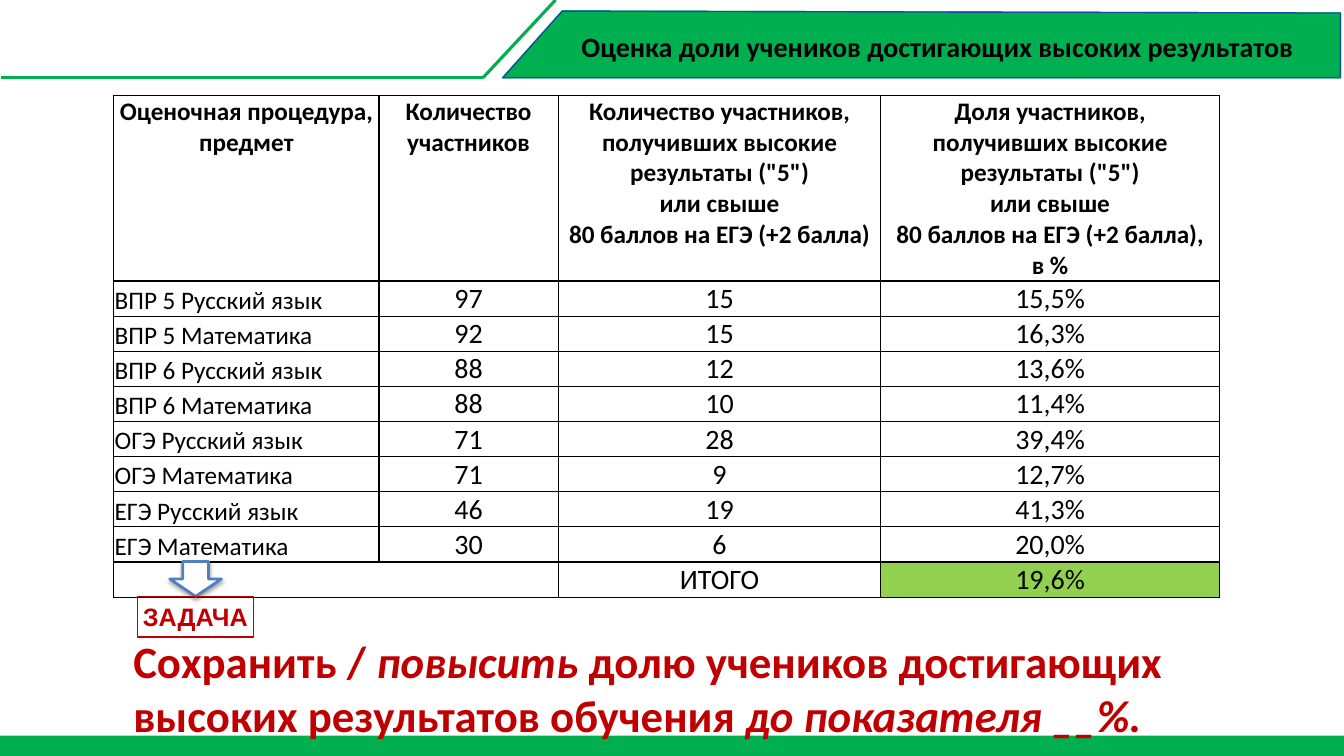
import collections
import lxml.etree
import pptx
import pptx.dml.color
import pptx.enum.shapes
import pptx.enum.text
import pptx.oxml
import pptx.oxml.ns
import pptx.util

Cm = pptx.util.Cm
Pt = pptx.util.Pt
RGBColor = pptx.dml.color.RGBColor
SHAPES = pptx.enum.shapes.MSO_SHAPE
ALIGN = pptx.enum.text.PP_ALIGN
ANCHOR = pptx.enum.text.MSO_ANCHOR
FIT = pptx.enum.text.MSO_AUTO_SIZE
qn = pptx.oxml.ns.qn

GREEN = RGBColor(0x00, 0xB0, 0x50)
NAVY = RGBColor(0x0C, 0x54, 0x9E)
BLUE = RGBColor(0x4F, 0x81, 0xBD)
RED = RGBColor(0xC0, 0x00, 0x00)
LIME = RGBColor(0x92, 0xD0, 0x50)
BLACK = RGBColor(0, 0, 0)
WHITE = RGBColor(255, 255, 255)

Box = collections.namedtuple("Box", "left top width height")
PAGE = Box(0, 0, 33.87, 19.05)

TITLE_FONT = {"name": "Calibri", "size": Pt(20), "bold": True}
HEADER_FONT = {"name": "Calibri", "size": Pt(18), "bold": True}
LABEL_FONT = {"name": "Calibri", "size": Pt(18), "bold": False}
VALUE_FONT = {"name": "Calibri", "size": Pt(20), "bold": False}
TASK_FONT = {"name": "Arial", "size": Pt(18), "bold": True}
GOAL_FONT = {"name": "Calibri", "size": Pt(32), "bold": True}

COLUMN_WIDTHS = [6.68, 4.52, 8.13, 8.53]
HEADER_HEIGHT = 4.6
ROW_HEIGHT = 0.87
HEADERS = [
    "Оценочная процедура, предмет",
    "Количество участников",
    'Количество участников, получивших высокие результаты ("5")\n'
    "или свыше\n80 баллов на ЕГЭ (+2 балла)",
    'Доля участников,\nполучивших высокие результаты ("5")\n'
    "или свыше\n80 баллов на ЕГЭ (+2 балла),\nв %",
]
RESULTS = [
    ("ВПР 5 Русский язык", "97", "15", "15,5%"),
    ("ВПР 5 Математика", "92", "15", "16,3%"),
    ("ВПР 6 Русский язык", "88", "12", "13,6%"),
    ("ВПР 6 Математика", "88", "10", "11,4%"),
    ("ОГЭ Русский язык", "71", "28", "39,4%"),
    ("ОГЭ Математика", "71", "9", "12,7%"),
    ("ЕГЭ Русский язык", "46", "19", "41,3%"),
    ("ЕГЭ Математика", "30", "6", "20,0%"),
    ("", "", "ИТОГО", "19,6%"),
]
GOAL = [
    ("Сохранить / ", False),
    ("повысить", True),
    (" долю учеников достигающих высоких результатов обучения ", False),
    ("до показателя __%.", True),
]


def assign(target, values):
    for name, value in values.items():
        setattr(target, name, value)


def style_font(font, values, color):
    assign(font, values)
    font.color.rgb = color


def set_frame(frame, inset, wrap=True, anchor=ANCHOR.TOP):
    sides = ("left", "top", "right", "bottom")
    assign(frame, {f"margin_{side}": Cm(inset) for side in sides})
    assign(frame, {"word_wrap": wrap, "auto_size": FIT.NONE, "vertical_anchor": anchor})


def add_line(page, start, end):
    line = page.shapes.add_connector(
        pptx.enum.shapes.MSO_CONNECTOR.STRAIGHT, *map(Cm, start + end)
    )
    line.line.color.rgb = GREEN
    line.line.width = Pt(2.25)
    lxml.etree.SubElement(line.element.spPr, qn("a:effectLst"))


def add_banner(page, box):
    right, bottom = box.left + box.width, box.top + box.height
    corners = [
        (box.left + 1.5, box.top),
        (right, box.top + 0.05),
        (right, bottom),
        (box.left, bottom),
    ]
    points = [(Cm(x), Cm(y)) for x, y in corners]
    for fill, edge in ((GREEN, GREEN), (None, NAVY)):
        builder = page.shapes.build_freeform(*points[0], scale=1.0)
        builder.add_line_segments(points[1:], close=True)
        banner = builder.convert_to_shape()
        banner.shadow.inherit = False
        if fill:
            banner.fill.solid()
            banner.fill.fore_color.rgb = fill
        else:
            banner.fill.background()
        banner.line.color.rgb = edge
        banner.line.width = Pt(1)
    bend = (box.left - 0.5, bottom)
    add_line(page, (box.left + 1.33, 0), bend)
    add_line(page, bend, (0.03, bottom))

    title = page.shapes.title
    assign(title, {"left": Cm(box.left + 1.73), "top": Cm(box.top + 0.33),
                   "width": Cm(20.12), "height": Cm(1.11)})
    title.element.getparent().append(title.element)
    frame = title.text_frame
    frame.text = "Оценка доли учеников достигающих высоких результатов"
    set_frame(frame, 0.13)
    frame.margin_left = frame.margin_right = Cm(0.25)
    frame.paragraphs[0].alignment = ALIGN.LEFT
    style_font(frame.paragraphs[0].font, TITLE_FONT, BLACK)


def add_footer(page, box):
    bar = page.shapes.add_shape(SHAPES.RECTANGLE, *map(Cm, box))
    bar.shadow.inherit = False
    bar.fill.solid()
    bar.fill.fore_color.rgb = GREEN
    bar.line.fill.background()


def add_borders(cell):
    properties = cell._tc.get_or_add_tcPr()
    for index, side in enumerate("LRTB"):
        border = pptx.oxml.parse_xml(
            f'<a:ln{side} {pptx.oxml.ns.nsdecls("a")} w="12700"><a:solidFill>'
            f'<a:srgbClr val="{BLACK}"/></a:solidFill></a:ln{side}>'
        )
        properties.insert(index, border)


def fill_cell(cell, text, font, align, anchor):
    assign(cell, {"margin_left": Cm(0.02), "margin_right": Cm(0.02),
                  "margin_top": Cm(0.02), "margin_bottom": 0,
                  "vertical_anchor": anchor})
    cell.fill.background()
    add_borders(cell)
    cell.text = text
    for para in cell.text_frame.paragraphs:
        para.alignment = align
        style_font(para.font, font, BLACK)


def add_results(page, box):
    rows = [HEADERS] + RESULTS
    table = page.shapes.add_table(len(rows), len(HEADERS), *map(Cm, box)).table
    assign(table, {"first_row": False, "horz_banding": False})
    for column, width in zip(table.columns, COLUMN_WIDTHS):
        column.width = Cm(width)
    for r, texts in enumerate(rows):
        table.rows[r].height = Cm(ROW_HEIGHT if r else HEADER_HEIGHT)
        for c, text in enumerate(texts):
            if r == 0:
                look = (HEADER_FONT, ALIGN.CENTER, ANCHOR.TOP)
            elif c == 0:
                look = (LABEL_FONT, ALIGN.LEFT, ANCHOR.BOTTOM)
            else:
                look = (VALUE_FONT, ALIGN.CENTER, ANCHOR.BOTTOM)
            fill_cell(table.cell(r, c), text, *look)
    last = len(rows) - 1
    table.cell(last, 0).merge(table.cell(last, 1))
    total = table.cell(last, 3)
    total.fill.solid()
    total.fill.fore_color.rgb = LIME


def add_task(page, box):
    arrow = page.shapes.add_shape(
        SHAPES.RIGHT_ARROW, Cm(box.left + 1.26), Cm(box.top), Cm(0.88), Cm(1.3)
    )
    arrow.rotation = 90
    arrow.fill.solid()
    arrow.fill.fore_color.rgb = WHITE
    arrow.line.color.rgb = BLUE
    arrow.line.width = Pt(2)
    arrow.element.spPr.append(pptx.oxml.parse_xml(
        f'<a:effectLst {pptx.oxml.ns.nsdecls("a")}><a:outerShdw blurRad="38100" '
        'dist="22860" dir="5400000" rotWithShape="0"><a:srgbClr val="000000">'
        '<a:alpha val="35000"/></a:srgbClr></a:outerShdw></a:effectLst>'
    ))

    label = page.shapes.add_shape(
        SHAPES.RECTANGLE, Cm(box.left + 0.24), Cm(box.top + 1.09), Cm(2.92), Cm(1.02)
    )
    label.shadow.inherit = False
    label.fill.background()
    label.line.color.rgb = RED
    label.line.width = Pt(1)
    set_frame(label.text_frame, 0.13, wrap=False, anchor=ANCHOR.MIDDLE)
    label.text_frame.text = "ЗАДАЧА"
    para = label.text_frame.paragraphs[0]
    para.alignment = ALIGN.LEFT
    style_font(para.font, TASK_FONT, RED)

    goal = page.shapes.add_textbox(
        Cm(box.left), Cm(box.top + 1.91), Cm(box.width), Cm(box.height - 1.91)
    )
    set_frame(goal.text_frame, 0.13)
    para = goal.text_frame.paragraphs[0]
    for text, italic in GOAL:
        span = para.add_run()
        span.text = text
        style_font(span.font, {**GOAL_FONT, "italic": italic}, RED)


def main():
    deck = pptx.Presentation()
    deck.slide_width, deck.slide_height = Cm(PAGE.width), Cm(PAGE.height)
    page = deck.slides.add_slide(deck.slide_layouts[5])
    add_footer(page, Box(0, PAGE.height - 0.51, PAGE.width, 0.51))
    add_banner(page, Box(12.67, 0.28, 21.11, 1.68))
    add_results(page, Box(2.87, 2.41, sum(COLUMN_WIDTHS),
                          HEADER_HEIGHT + ROW_HEIGHT * len(RESULTS)))
    add_task(page, Box(3.23, 13.94, 27.43, 4.91))
    deck.save("out.pptx")


if __name__ == "__main__":
    main()
